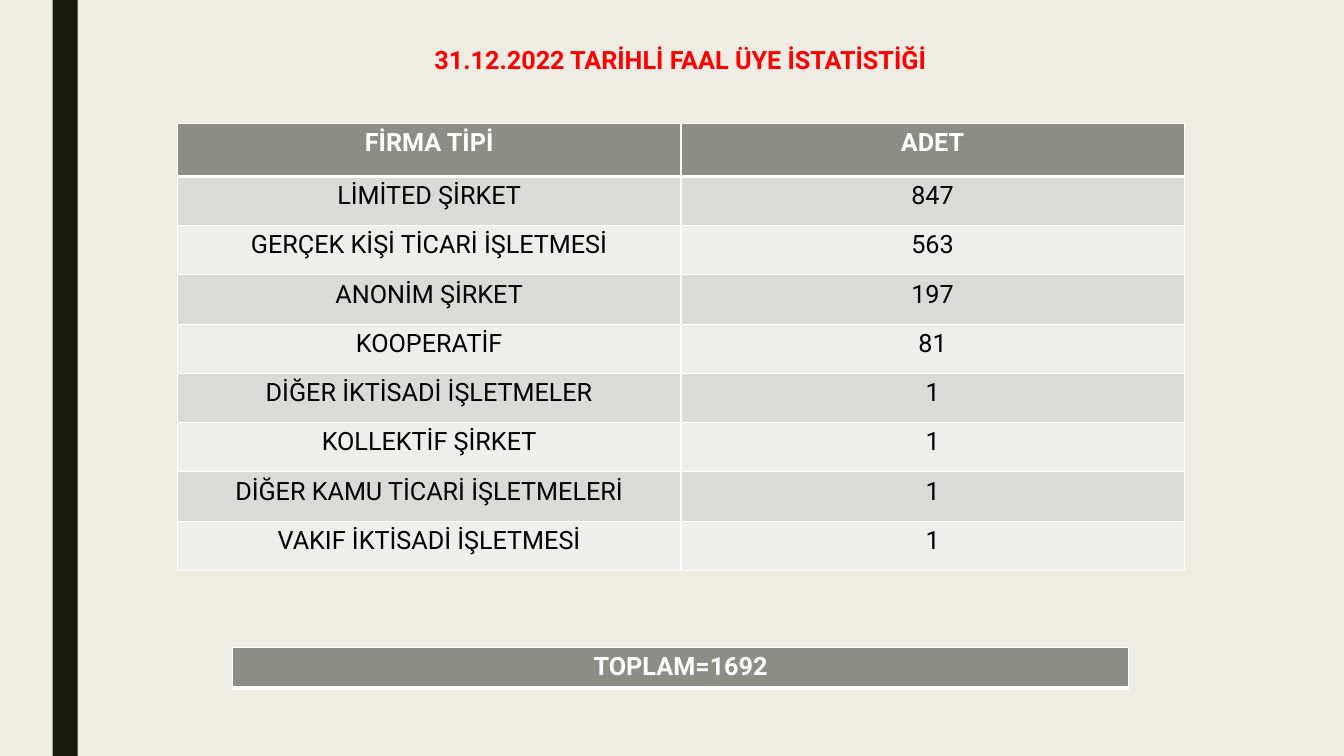
from lxml.etree import SubElement
from pptx import Presentation
from pptx.dml.color import RGBColor
from pptx.enum.shapes import MSO_SHAPE as Preset
from pptx.enum.text import MSO_AUTO_SIZE as AutoSize, PP_ALIGN as Align
from pptx.oxml.ns import qn
from pptx.util import Pt

BACKGROUND = RGBColor(0xEF, 0xED, 0xE3)
STRIPE = RGBColor(0x19, 0x1B, 0x0E)
RED = RGBColor(0xFF, 0x00, 0x00)
WHITE = RGBColor(0xFF, 0xFF, 0xFF)
BLACK = RGBColor(0x00, 0x00, 0x00)
HEADER_FILL = RGBColor(0x8C, 0x8D, 0x86)
BAND_FILLS = (RGBColor(0xDA, 0xDB, 0xD9), RGBColor(0xEE, 0xEE, 0xED))

TITLE_FORMAT = {"name": "Roboto", "size": Pt(18), "bold": True}
BODY_FORMAT = {**TITLE_FORMAT, "bold": False}

MEMBER_ROWS = (
    ("FİRMA TİPİ", "ADET"),
    ("LİMİTED ŞİRKET", "847"),
    ("GERÇEK KİŞİ TİCARİ İŞLETMESİ", "563"),
    ("ANONİM ŞİRKET", "197"),
    ("KOOPERATİF", "81"),
    ("DİĞER İKTİSADİ İŞLETMELER", "1"),
    ("KOLLEKTİF ŞİRKET", "1"),
    ("DİĞER KAMU TİCARİ İŞLETMELERİ", "1"),
    ("VAKIF İKTİSADİ İŞLETMESİ", "1"),
)


def write_text(text_frame, text, color, formats):
    """Write one centred, formatted line into a text frame."""
    paragraph = text_frame.paragraphs[0]
    paragraph.alignment = Align.CENTER
    run = paragraph.add_run()
    run.text = text
    for name, value in formats.items():
        setattr(run.font, name, value)
    run.font.color.rgb = color


def add_stripe(slide, left, width, height):
    """Add the dark vertical stripe."""
    shape = slide.shapes.add_shape(Preset.RECTANGLE, left, 0, width, height)
    shape.shadow.inherit = False
    shape.fill.solid()
    shape.fill.fore_color.rgb = STRIPE
    shape.line.fill.background()


def add_title(slide, text, left, top, width, height):
    """Add the red title."""
    text_frame = slide.shapes.add_textbox(left, top, width, height).text_frame
    text_frame.word_wrap = True
    text_frame.auto_size = AutoSize.SHAPE_TO_FIT_TEXT
    write_text(text_frame, text, RED, TITLE_FORMAT)


def set_borders(cell, top, bottom):
    """Draw white cell borders with the given top and bottom widths."""
    properties = cell._tc.get_or_add_tcPr()
    widths = {"a:lnL": Pt(1), "a:lnR": Pt(1), "a:lnT": top, "a:lnB": bottom}
    for tag, width in widths.items():
        line = SubElement(properties, qn(tag), w=str(width))
        fill = SubElement(line, qn("a:solidFill"))
        SubElement(fill, qn("a:srgbClr"), val=str(WHITE))


def add_banded_table(slide, rows, left, top, width, header_height, row_height):
    """Add a table with a dark header row and banded rows below it."""
    height = header_height + row_height * (len(rows) - 1)
    table = slide.shapes.add_table(
        len(rows), len(rows[0]), left, top, width, height).table
    for row_index, texts in enumerate(rows):
        is_header = row_index == 0
        table.rows[row_index].height = header_height if is_header else row_height
        fill = HEADER_FILL if is_header else BAND_FILLS[(row_index - 1) % 2]
        color, formats = (WHITE, TITLE_FORMAT) if is_header else (BLACK, BODY_FORMAT)
        for column_index, text in enumerate(texts):
            cell = table.cell(row_index, column_index)
            set_borders(cell, Pt(3 if row_index == 1 else 1), Pt(3 if is_header else 1))
            cell.fill.solid()
            cell.fill.fore_color.rgb = fill
            write_text(cell.text_frame, text, color, formats)


def main():
    """Build the member statistics slide."""
    presentation = Presentation()
    presentation.slide_width, presentation.slide_height = Pt(960), Pt(540)
    slide = presentation.slides.add_slide(presentation.slide_layouts[6])
    slide.background.fill.solid()
    slide.background.fill.fore_color.rgb = BACKGROUND
    add_stripe(slide, Pt(37.5), Pt(18), Pt(540))
    add_title(slide, "31.12.2022 TARİHLİ FAAL ÜYE İSTATİSTİĞİ",
              Pt(108), Pt(28.2), Pt(756), Pt(29))
    add_banded_table(slide, MEMBER_ROWS,
                     Pt(126.8), Pt(88), Pt(719.2), Pt(38), Pt(35.2))
    add_banded_table(slide, (("TOPLAM=1692",),),
                     Pt(166.2), Pt(462.3), Pt(640), Pt(29.2), Pt(0))
    presentation.save("out.pptx")


if __name__ == "__main__":
    main()
